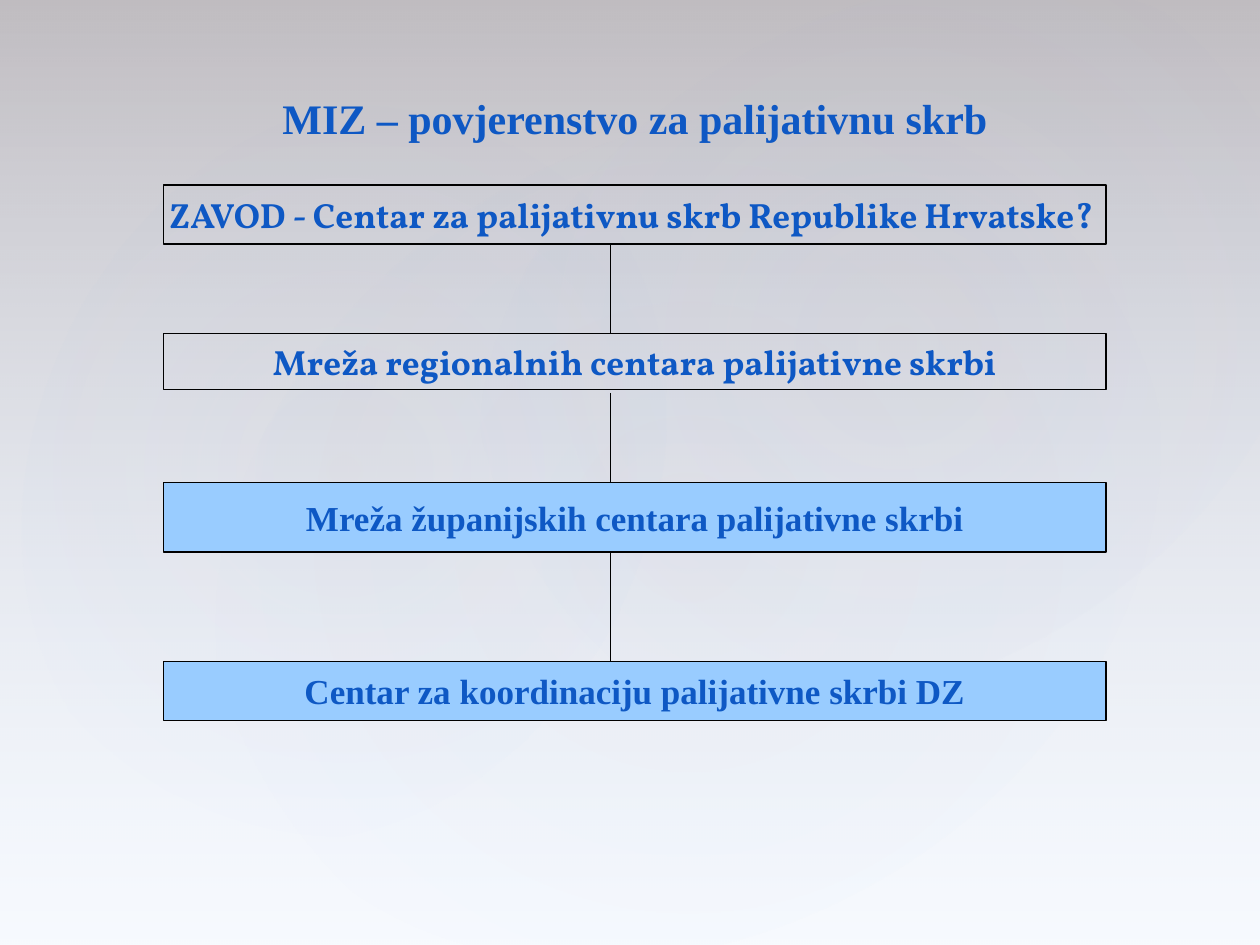
from dataclasses import dataclass

from lxml.etree import SubElement
from pptx import Presentation
from pptx.dml.color import RGBColor
from pptx.enum.shapes import MSO_CONNECTOR, MSO_SHAPE
from pptx.enum.text import MSO_ANCHOR, MSO_AUTO_SIZE, PP_ALIGN
from pptx.oxml import parse_xml
from pptx.oxml.ns import nsdecls, qn
from pptx.util import Cm, Pt


@dataclass(frozen=True)
class Theme:
    ink: RGBColor = RGBColor(0x0E, 0x58, 0xC4)
    edge: RGBColor = RGBColor(0, 0, 0)
    sky: RGBColor = RGBColor(0x99, 0xCC, 0xFF)
    dusk: str = "504652"
    haze: str = "ACCBF9"
    glow: str = "C4BCC6"
    serif: str = "Times New Roman"
    book: str = "Vollkorn"
    head: Pt = Pt(24)
    body: Pt = Pt(20)
    rule: Pt = Pt(0.75)


@dataclass(frozen=True)
class Level:
    text: str
    top: float
    high: float
    font: str
    solid: bool = True
    gap: float = 0  # space between the box and the line below it
    grow: bool = False


@dataclass(frozen=True)
class Orb:
    left: float
    top: float
    wide: float
    high: float
    turn: float
    alpha: int


THEME = Theme()
WIDE, HIGH = 25.4, 19.05
LEFT, SPAN = 3.3, 19
AXIS = 12.3

ORBS = [
    Orb(3.81, 2.9, 20.12, 15.85, 328.7, 7),
    Orb(-0.76, 3.25, 15.39, 12.45, 294.3, 8),
    Orb(9.09, 0.33, 18.01, 13.21, 328.7, 8),
]
LEVELS = [
    Level("ZAVOD - Centar za palijativnu skrb Republike Hrvatske? ",
          3.73, 1.19, THEME.book, solid=False),
    Level("Mreža regionalnih centara palijativne skrbi",
          6.73, 1.12, THEME.book, solid=False, gap=0.07, grow=True),
    Level("Mreža županijskih centara palijativne skrbi",
          9.73, 1.4, THEME.serif),
    Level("Centar za koordinaciju palijativne skrbi DZ",
          13.33, 1.19, THEME.serif),
]
LINEAR = '<a:lin ang="5400000" scaled="0"/>'
ROUND = ('<a:path path="circle"><a:fillToRect l="50000" t="50000" '
         'r="50000" b="50000"/></a:path>')


def fade(shape, stops: list, shade: str) -> None:
    """Fill with a gradient of (position, colour, opacity) stops in percent."""
    marks = "".join(
        f'<a:gs pos="{pos * 1000}"><a:srgbClr val="{tint}">'
        f'<a:alpha val="{alpha * 1000}"/></a:srgbClr></a:gs>'
        for pos, tint, alpha in stops)
    fill = parse_xml(f'<a:gradFill {nsdecls("a")} rotWithShape="1">'
                     f'<a:gsLst>{marks}</a:gsLst>{shade}</a:gradFill>')
    shape._element.spPr.find(qn("a:prstGeom")).addnext(fill)
    shape.line.fill.background()
    shape.shadow.inherit = False


def write(shape, text: str, font: str, size: Pt) -> None:
    frame = shape.text_frame
    frame.text = text
    line = frame.paragraphs[0]
    line.alignment = PP_ALIGN.CENTER
    face = line.runs[0].font
    face.name, face.size, face.bold = font, size, True
    face.color.rgb = THEME.ink


def draw_back(shapes) -> None:
    veil = shapes.add_shape(MSO_SHAPE.RECTANGLE, 0, 0, Cm(WIDE), Cm(HIGH))
    fade(veil, [(0, THEME.dusk, 36), (100, THEME.haze, 10)], LINEAR)
    for orb in ORBS:
        disc = shapes.add_shape(MSO_SHAPE.OVAL, Cm(orb.left), Cm(orb.top),
                                Cm(orb.wide), Cm(orb.high))
        disc.rotation = orb.turn
        fade(disc, [(0, THEME.glow, orb.alpha), (58, THEME.haze, 0)], ROUND)


def draw_title(shapes) -> None:
    title = shapes.title
    title.left, title.top = Cm(LEFT), Cm(1.73)
    title.width, title.height = Cm(SPAN), Cm(1.27)
    write(title, "MIZ – povjerenstvo za palijativnu skrb",
          THEME.serif, THEME.head)
    frame = title.text_frame
    frame.word_wrap = True
    frame.auto_size = MSO_AUTO_SIZE.NONE
    frame.vertical_anchor = MSO_ANCHOR.TOP
    shapes._spTree.append(title._element)  # in front of the backdrop


def draw_level(shapes, level: Level) -> None:
    box = shapes.add_shape(MSO_SHAPE.RECTANGLE, Cm(LEFT), Cm(level.top),
                           Cm(SPAN), Cm(level.high))
    box.shadow.inherit = False
    if level.solid:
        box.fill.solid()
        box.fill.fore_color.rgb = THEME.sky
    else:
        box.fill.background()
    box.line.color.rgb = THEME.edge
    box.line.width = THEME.rule
    write(box, level.text, level.font, THEME.body)
    frame = box.text_frame
    frame.word_wrap = level.grow
    if level.grow:
        frame.auto_size = MSO_AUTO_SIZE.SHAPE_TO_FIT_TEXT
        frame.vertical_anchor = MSO_ANCHOR.TOP
    else:
        frame.vertical_anchor = MSO_ANCHOR.MIDDLE


def draw_link(shapes, upper: Level, lower: Level) -> None:
    start = upper.top + upper.high + upper.gap
    link = shapes.add_connector(MSO_CONNECTOR.STRAIGHT, Cm(AXIS), Cm(start),
                                Cm(AXIS), Cm(lower.top))
    link.line.color.rgb = THEME.edge
    link.line.width = THEME.rule
    SubElement(link._element.spPr, qn("a:effectLst"))


def main() -> None:
    deck = Presentation()
    deck.slide_width, deck.slide_height = Cm(WIDE), Cm(HIGH)
    shapes = deck.slides.add_slide(deck.slide_layouts[5]).shapes
    draw_back(shapes)
    draw_title(shapes)
    for level in LEVELS:
        draw_level(shapes, level)
    for upper, lower in zip(LEVELS, LEVELS[1:]):
        draw_link(shapes, upper, lower)
    deck.save("out.pptx")


if __name__ == "__main__":
    main()
